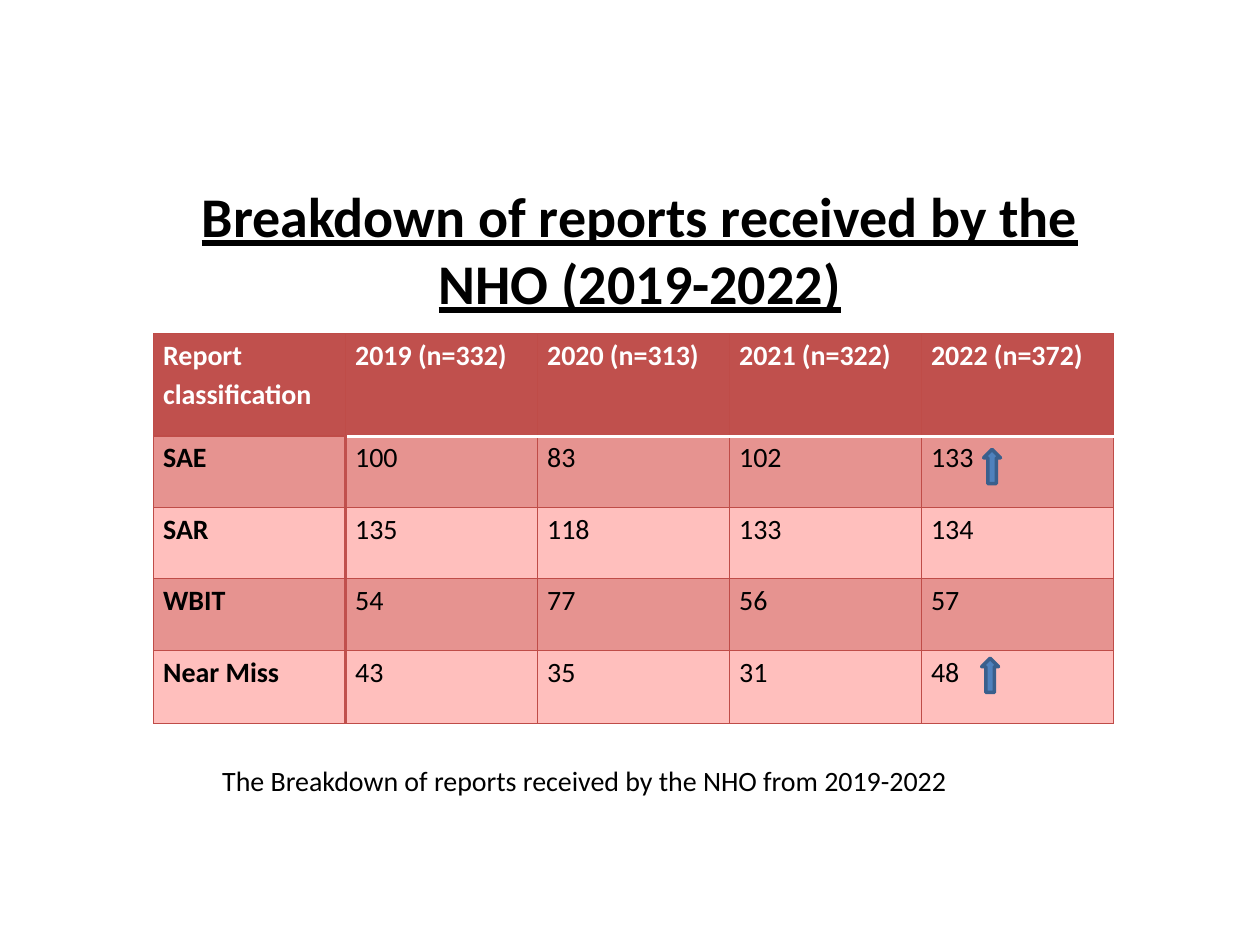
from dataclasses import dataclass

from lxml import etree
from pptx import Presentation
from pptx.dml.color import RGBColor
from pptx.enum import shapes, text
from pptx.oxml import ns
from pptx.util import Cm, Pt


@dataclass(frozen=True)
class Theme:
    font: str = "Calibri"
    ink: str = "000000"
    white: str = "FFFFFF"
    red: str = "C0504D"
    rule: str = "BF4C48"
    dark: str = "E69390"
    light: str = "FFBFBD"
    blue: str = "4F81BD"
    navy: str = "3A5F8C"
    head: int = 32
    body: int = 16
    thin: float = 0.75
    thick: float = 2


class Deck:
    def __init__(self, theme):
        self.theme = theme
        self.show = Presentation()
        self.show.slide_width, self.show.slide_height = Cm(25.4), Cm(19.05)
        self.slide = self.show.slides.add_slide(self.show.slide_layouts[5])

    def add_text(self, para, words, size, color, bold=False, under=False):
        run = para.add_run()
        run.text = words
        font = run.font
        font.name, font.size = self.theme.font, Pt(size)
        font.bold, font.underline = bold, under
        font.color.rgb = RGBColor.from_string(color)

    def title(self, words, left, top, width, height):
        box = self.slide.shapes.title
        box.left, box.top, box.width, box.height = map(Cm, (left, top, width, height))
        frame = box.text_frame
        frame.vertical_anchor = text.MSO_ANCHOR.MIDDLE
        para = frame.paragraphs[0]
        para.alignment = text.PP_ALIGN.CENTER
        self.add_text(para, words, self.theme.head, self.theme.ink, True, True)

    def label(self, words, left, top, width, height):
        box = self.slide.shapes.add_textbox(*map(Cm, (left, top, width, height)))
        frame = box.text_frame
        frame.word_wrap = False
        frame.auto_size = text.MSO_AUTO_SIZE.SHAPE_TO_FIT_TEXT
        para = frame.paragraphs[0]
        para.alignment = text.PP_ALIGN.CENTER
        self.add_text(para, words, self.theme.body, self.theme.ink)

    def arrow(self, left, top, width, height):
        kind = shapes.MSO_SHAPE.UP_ARROW
        mark = self.slide.shapes.add_shape(kind, *map(Cm, (left, top, width, height)))
        mark.shadow.inherit = False
        mark.fill.solid()
        mark.fill.fore_color.rgb = RGBColor.from_string(self.theme.blue)
        mark.line.color.rgb = RGBColor.from_string(self.theme.navy)
        mark.line.width = Pt(self.theme.thick)

    def edges(self, cell, lines):
        props = cell._tc.get_or_add_tcPr()
        for spot, side in enumerate("LRTB"):
            color, width = lines.get(side, (self.theme.rule, self.theme.thin))
            line = etree.Element(ns.qn(f"a:ln{side}"), w=str(int(Pt(width))))
            fill = etree.SubElement(line, ns.qn("a:solidFill"))
            etree.SubElement(fill, ns.qn("a:srgbClr"), val=color)
            props.insert(spot, line)

    def cell(self, cell, words, row, col):
        look = self.theme
        top, first = row == 0, col == 0
        cell.margin_left = cell.margin_right = Cm(0.19)
        cell.margin_top = cell.margin_bottom = 0
        cell.fill.solid()
        shade = look.red if top else look.dark if row % 2 else look.light
        cell.fill.fore_color.rgb = RGBColor.from_string(shade)
        para = cell.text_frame.paragraphs[0]
        para.line_spacing = 1.15
        self.add_text(para, words, look.body, look.white if top else look.ink, top or first)
        lines = {}
        if top and not first:
            lines["B"] = (look.white, look.thick)
        if row == 1 and not first:
            lines["T"] = (look.white, look.thick)
        if not top and col < 2:
            lines["L" if col else "R"] = (look.red, look.thick)
        self.edges(cell, lines)

    def table(self, data, left, top, width, tall):
        size = map(Cm, (left, top, width, sum(tall)))
        grid = self.slide.shapes.add_table(len(data), len(data[0]), *size).table
        for row, high in zip(grid.rows, tall):
            row.height = Cm(high)
        for r, line in enumerate(data):
            for c, words in enumerate(line):
                self.cell(grid.cell(r, c), words, r, c)

    def save(self):
        self.show.save("out.pptx")


def main():
    deck = Deck(Theme())
    data = [
        ("Report classification", "2019 (n=332)", "2020 (n=313)", "2021 (n=322)", "2022 (n=372)"),
        ("SAE", "100", "83", "102", "133"),
        ("SAR", "135", "118", "133", "134"),
        ("WBIT", "54", "77", "56", "57"),
        ("Near Miss", "43", "35", "31", "48"),
    ]
    deck.table(data, 3.1, 6.73, 19.35, (2.06, 1.44, 1.44, 1.44, 1.48))
    for left, top in ((19.83, 9.06), (19.79, 13.27)):
        deck.arrow(left, top, 0.34, 0.69)
    deck.title("Breakdown of reports received by the NHO (2019-2022)", 3.3, 3.12, 19.2, 3.78)
    deck.label(" The Breakdown of reports received by the NHO from 2019-2022", 3.86, 15.27, 15.72, 0.94)
    deck.save()


if __name__ == "__main__":
    main()
